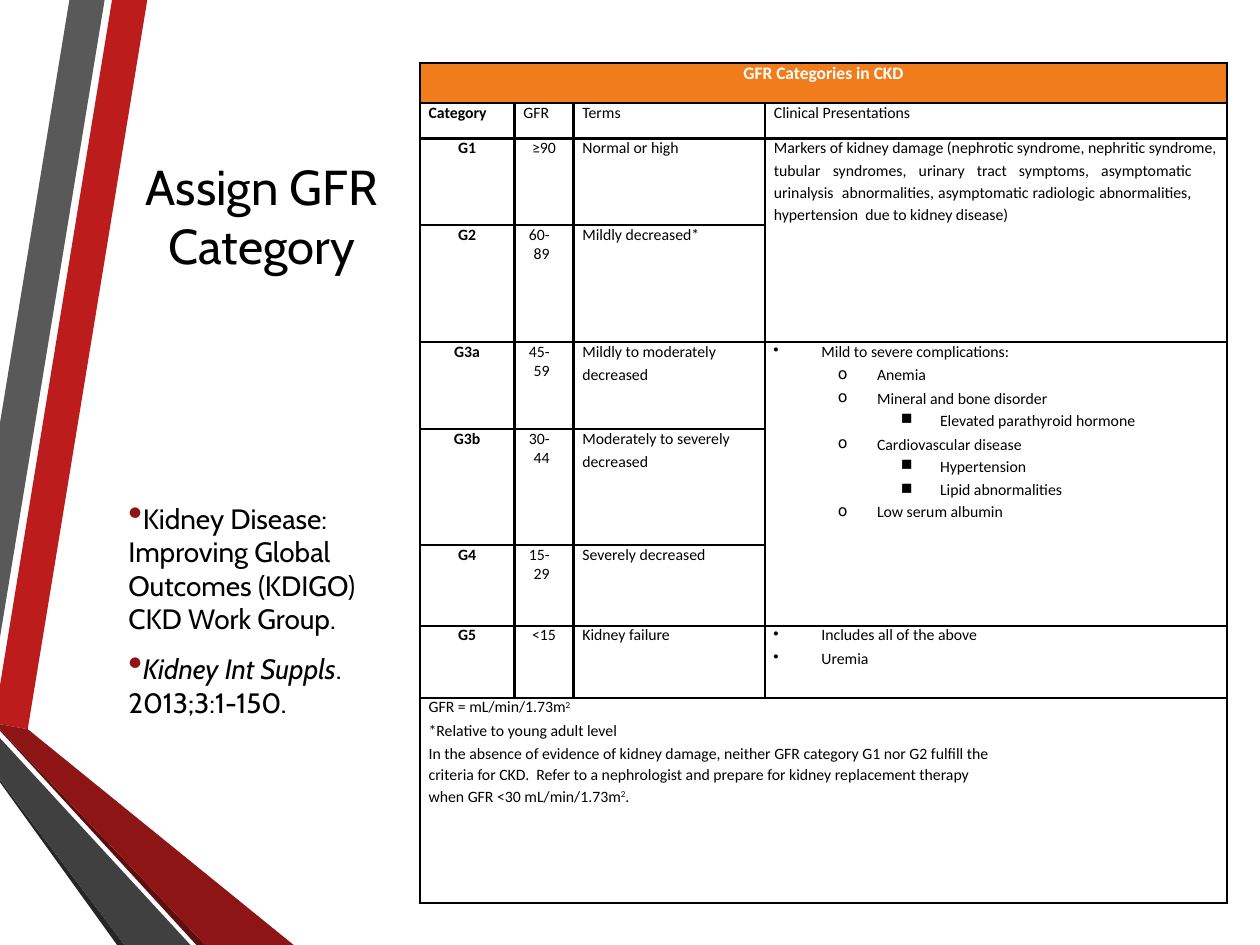
"""Build a slide on assigning the GFR category in chronic kidney disease."""
from lxml import etree
from pptx import Presentation, util as u
from pptx.dml.color import RGBColor
from pptx.enum import text
from pptx.oxml import ns

THEME = {
    "ink": "000000", "white": "FFFFFF", "head": "F07C1C",
    "red": "BC1C1C", "wine": "8D1515", "dusk": "5E0E0E",
    "gray": "595959", "slate": "404040", "coal": "262626",
    "title": ("Cabin", 28), "body": ("Cabin", 16),
    "band": ("Calibri", 10), "cell": ("Calibri", 9),
}
LEFT, MID, RIGHT, FULL = (text.PP_ALIGN.LEFT, text.PP_ALIGN.CENTER,
                          text.PP_ALIGN.RIGHT, text.PP_ALIGN.JUSTIFY)


def node(parent, tag, **attrs):
    return etree.SubElement(parent, ns.qn("a:" + tag), **attrs)


def write(frame, words, kind, color="ink", bold=False, align=LEFT, left=0, hang=0,
          right=0, before=0, after=0, lines=None, mark=None, tint=None, level=0):
    para = frame.paragraphs[0]
    if para.runs:
        para = frame.add_paragraph()
        para.space_before = u.Pt(before)
    props = para._p.get_or_add_pPr()
    for key, size in (("marL", left), ("marR", right), ("indent", -hang)):
        props.set(key, str(u.Cm(size)))
    if tint:
        node(node(props, "buClr"), "srgbClr", val=THEME[tint])
        node(props, "buSzPct", val="145000")
    if mark:
        node(props, "buChar", char=mark)
    else:
        node(props, "buNone")
    para.level, para.alignment = level, align
    para.space_after = u.Pt(after)
    if lines:
        para.line_spacing = lines
    for part in words.split("|"):
        para.add_run().text = part
    font = para.font
    font.name, font.size = THEME[kind][0], u.Pt(THEME[kind][1])
    font.bold = bold
    font.color.rgb = RGBColor.from_string(THEME[color])
    return para


deck = Presentation()
deck.slide_width, deck.slide_height = u.Cm(25.4), u.Cm(19.05)
slide = deck.slides.add_slide(deck.slide_layouts[6])

bands = [
    ("red", [(0, 13.82), (0, 14.6), (0.56, 14.7), (2.97, 0), (2.26, 0)]),
    ("gray", [(2.11, 0), (1.4, 0), (0, 8.53), (0, 12.85)]),
    ("coal", [(0, 15.72), (0, 15.77), (2.36, 19.05), (2.51, 19.05)]),
    ("dusk", [(0, 14.7), (0, 14.73), (3.96, 19.05), (4.14, 19.05)]),
    ("wine", [(0, 14.7), (4.14, 19.05), (5.92, 19.05), (0.56, 14.7), (0, 14.6)]),
    ("slate", [(0, 15.72), (2.51, 19.05), (3.84, 19.05), (0, 14.88)]),
]
for color, points in bands:
    spots = [(u.Cm(x), u.Cm(y)) for x, y in points]
    pen = slide.shapes.build_freeform(*spots[0])
    pen.add_line_segments(spots[1:], close=True)
    band = pen.convert_to_shape()
    band.shadow.inherit = False
    band.fill.solid()
    band.fill.fore_color.rgb = RGBColor.from_string(THEME[color])
    band.line.fill.background()

frames = []
for top, height in ((1.91, 4.88), (7.95, 8.69)):
    box = slide.shapes.add_textbox(u.Cm(2.34), u.Cm(top), u.Cm(5.87), u.Cm(height))
    box.text_frame.word_wrap = True
    box.text_frame.vertical_anchor = text.MSO_ANCHOR.MIDDLE
    frames.append(box.text_frame)
title, body = frames
write(title, "Assign GFR Category", "title", align=MID)
point = dict(kind="body", mark="•", tint="wine", before=3.2, after=6)
write(body, "Kidney Disease: Improving Global Outcomes (KDIGO) CKD Work Group.", **point)
cite = write(body, "Kidney Int Suppls|. 2013;3:1-150.", **point)
cite.runs[0].font.italic = True

widths = [1.91, 1.19, 3.86, 9.32]
heights = [0.81, 0.71, 1.75, 2.36, 1.75, 2.34, 1.63, 1.45, 4.14]
table = slide.shapes.add_table(len(heights), len(widths), u.Cm(8.46), u.Cm(1.27),
                               u.Cm(sum(widths)), u.Cm(sum(heights))).table
table.first_row = table.horz_banding = False
for column, width in zip(table.columns, widths):
    column.width = u.Cm(width)
for row, height in zip(table.rows, heights):
    row.height = u.Cm(height)
for cell in table.iter_cells():
    cell.margin_left = cell.margin_right = cell.margin_top = cell.margin_bottom = 0
    for side in ("lnL", "lnR", "lnT", "lnB"):
        line = node(cell._tc.get_or_add_tcPr(), side, w=str(u.Pt(1.5)))
        node(node(line, "solidFill"), "srgbClr", val=THEME["ink"])
    cell.fill.background()
for top, left, end, last in ((0, 0, 0, 3), (2, 3, 3, 3), (4, 3, 6, 3), (8, 0, 8, 3)):
    table.cell(top, left).merge(table.cell(end, last))

head = table.cell(0, 0)
head.fill.solid()
head.fill.fore_color.rgb = RGBColor.from_string(THEME["head"])
write(head.text_frame, "GFR Categories in CKD", "band", "white", True, MID)

inset = dict(kind="cell", left=0.18)
for col, label in enumerate(("Category", "GFR", "Terms", "Clinical Presentations")):
    write(table.cell(1, col).text_frame, label, bold=col == 0, **inset)

stages = [
    ("G1", "≥90", ["Normal or high"]),
    ("G2", "60-89", ["Mildly decreased*"]),
    ("G3a", "45-59", ["Mildly to moderately", "decreased"]),
    ("G3b", "30-44", ["Moderately to severely", "decreased"]),
    ("G4", "15-29", ["Severely decreased"]),
    ("G5", "<15", ["Kidney failure"]),
]
for row, (stage, rate, terms) in enumerate(stages, 2):
    write(table.cell(row, 0).text_frame, stage, "cell", bold=True, align=MID)
    place = dict(align=RIGHT, right=0.48) if "-" in rate else dict(align=MID)
    write(table.cell(row, 1).text_frame, rate, "cell", **place)
    for term in terms:
        write(table.cell(row, 2).text_frame, term, before=2.6, **inset)

signs = table.cell(2, 3).text_frame
write(signs, "Markers of kidney damage (nephrotic syndrome, nephritic syndrome,",
      align=FULL, **inset)
write(signs, "tubular syndromes, urinary tract symptoms, asymptomatic urinalysis  "
      "abnormalities, asymptomatic radiologic abnormalities, hypertension  due to "
      "kidney disease)", align=FULL, right=0.73, before=0.5, lines=1.15, **inset)

levels = [("•", 1.14, 0.97), ("o", 2.26, 0.79), ("■", 3.53, 0.79)]
lists = {
    4: [(0, "Mild to severe complications:", 0), (1, "Anemia", 2.6),
        (1, "Mineral and bone disorder", 2.6), (2, "Elevated parathyroid hormone", 1.6),
        (1, "Cardiovascular disease", 2.6), (2, "Hypertension", 1.6),
        (2, "Lipid abnormalities", 2.6), (1, "Low serum albumin", 1.6)],
    7: [(0, "Includes all of the above", 0), (0, "Uremia", 2.6)],
}
for row, items in lists.items():
    for level, words, before in items:
        mark, left, hang = levels[level]
        write(table.cell(row, 3).text_frame, words, "cell", left=left, hang=hang,
              before=before, mark=mark, level=level)

notes = table.cell(8, 0).text_frame
unit = write(notes, "GFR = mL/min/1.73m|2", **inset)
write(notes, "*Relative to young adult level", before=2.6, **inset)
rule = write(notes, "In the absence of evidence of kidney damage, neither GFR category G1 "
             "nor G2 fulfill the criteria for CKD.  Refer to a nephrologist and prepare for "
             "kidney replacement therapy when GFR <30 mL/min/1.73m|2|.",
             right=4.82, before=1, lines=1.11, **inset)
for para in (unit, rule):
    para.runs[1]._r.get_or_add_rPr().set("baseline", "28000")

deck.save("out.pptx")
